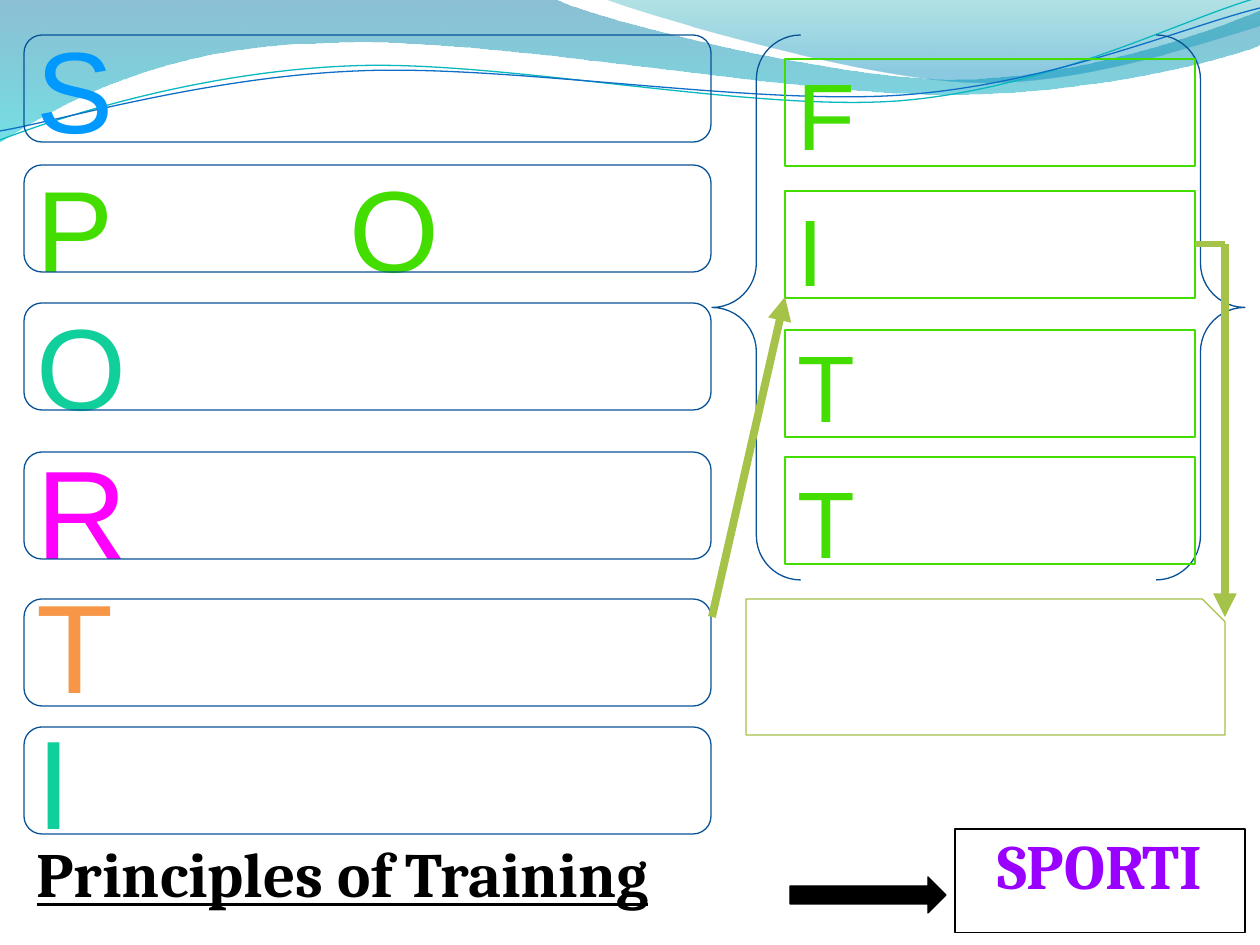
import pptx
import pptx.util
import pptx.dml.color
import pptx.enum.dml
import pptx.enum.shapes
import pptx.enum.text
import pptx.oxml
import pptx.oxml.ns
from dataclasses import dataclass

EMU_PER_PX = 914400 // 126
SHAPE = pptx.enum.shapes.MSO_SHAPE
ALIGN = pptx.enum.text.PP_ALIGN
qn = pptx.oxml.ns.qn
A_NAMESPACE = pptx.oxml.ns.nsdecls("a")


@dataclass(frozen=True)
class Theme:
    blue: str = "0099FF"
    green: str = "43DE00"
    teal: str = "10CF9B"
    magenta: str = "FF00FF"
    orange: str = "F79646"
    purple: str = "9900FF"
    black: str = "000000"
    navy: str = "095295"
    olive: str = "A5C249"
    wave_line_teal: str = "0AB8BF"
    wave_line_blue: str = "0F6FC6"
    letter_font: str = "Arial"
    heading_font: str = "Cambria"
    heading: int = 36
    fitt: int = 54
    letter: int = 66
    big_letter: int = 72
    hairline: float = 0.75


THEME = Theme()
BOX_HEIGHT = 107
PRINCIPLE_TOPS = (35, 165, 303, 452, 599, 727)
FITT_TOPS = (59, 191, 330, 457)

# Each wave: start point, then cubic segments (two controls and an end) or straight points.
BACK_WAVE = [(-1, 0), [(554, -1)],
             [(600, 21), (837, 79), (955, 79)], [(1075, 79), (1207, 33), (1260, 11)],
             [(1261, 45)],
             [(1239, 55), (1096, 96), (940, 94)], [(784, 94), (481, 35), (324, 43)],
             [(163, 45), (58, 105), (-1, 142)]]
FRONT_WAVE = [(604, -1), [(641, 14), (859, 78), (969, 82)],
              [(1079, 87), (1211, 40), (1260, 26)], [(1260, 0)]]
TEAL_LINE = [(0, 140), [(60, 117), (199, 72), (349, 66)],
             [(498, 59), (747, 112), (898, 101)], [(1050, 89), (1182, 19), (1257, -2)]]
BLUE_LINE = [(0, 131), [(59, 121), (207, 77), (357, 71)],
             [(508, 64), (752, 106), (903, 95)], [(1053, 84), (1186, 26), (1260, 8)]]


def px(value):
    return pptx.util.Emu(value * EMU_PER_PX)


def rgb(code):
    return pptx.dml.color.RGBColor.from_string(code)


def a_element(markup):
    """Make a DrawingML element from a tag with its attributes."""
    return pptx.oxml.parse_xml(f"<a:{markup} {A_NAMESPACE}/>")


def set_line(shape, color, width=THEME.hairline):
    shape.line.color.rgb = rgb(color)
    shape.line.width = pptx.util.Pt(width)


def add_wave(slide, outline, closed):
    """Draw the outline, joining every three-point segment into one cubic curve."""
    start, *segments = outline
    builder = slide.shapes.build_freeform(*map(px, start))
    builder.add_line_segments([tuple(map(px, point)) for segment in segments
                               for point in segment], close=closed)
    wave = builder.convert_to_shape()
    straight_parts = iter(list(wave._element.spPr.iter(qn("a:lnTo"))))
    for segment in segments:
        parts = [next(straight_parts) for _ in segment]
        if len(parts) == 3:
            curve = a_element("cubicBezTo")
            parts[0].addprevious(curve)
            for part in parts:
                curve.append(part[0])
                part.getparent().remove(part)
    wave.shadow.inherit = False
    return wave


def add_filled_wave(slide, outline, stops):
    """Stops run from top to bottom as (position, colour, opacity percent)."""
    wave = add_wave(slide, outline, True)
    wave.line.fill.background()
    wave.fill.gradient()
    wave.fill.gradient_angle = 270
    for stop, (position, color, _) in zip(wave.fill.gradient_stops, stops):
        stop.position = position
        stop.color.rgb = rgb(color)
    for node, (_, _, opacity) in zip(wave._element.spPr.iter(qn("a:srgbClr")), stops):
        node.append(a_element(f'alpha val="{opacity * 1000}"'))


def add_wave_line(slide, outline, color):
    wave = add_wave(slide, outline, False)
    wave.fill.background()
    set_line(wave, color)


def add_outline(slide, kind, left, top, width, height, color, fill=None):
    shape = slide.shapes.add_shape(kind, px(left), px(top), px(width), px(height))
    shape.shadow.inherit = False
    if fill:
        shape.fill.solid()
        shape.fill.fore_color.rgb = rgb(fill)
    else:
        shape.fill.background()
    set_line(shape, color)
    return shape


def add_link(slide, start, end, width, arrow=True):
    link = slide.shapes.add_connector(pptx.enum.shapes.MSO_CONNECTOR.STRAIGHT,
                                      *map(px, start + end))
    set_line(link, THEME.olive, width)
    if arrow:
        link.line._get_or_add_ln().append(a_element('tailEnd type="triangle"'))
    link._element.spPr.append(a_element("effectLst"))


def prepare_frame(shape, wrap=True, margin_top=6):
    frame = shape.text_frame
    frame.word_wrap = wrap
    frame.auto_size = pptx.enum.text.MSO_AUTO_SIZE.NONE
    frame.vertical_anchor = pptx.enum.text.MSO_ANCHOR.TOP
    frame.margin_top = px(margin_top)
    return frame


def place(shape, left, top, width, height):
    shape.left, shape.top, shape.width, shape.height = map(px, (left, top, width, height))


def write(paragraph, text, *, size, color, font=THEME.letter_font, bold=False,
          underline=False, align=ALIGN.LEFT, spacing=1.0, before=0.0, tracking=0):
    run = paragraph.add_run()
    run.text = text
    run.font.size = pptx.util.Pt(size)
    run.font.name = font
    run.font.color.rgb = rgb(color)
    run.font.bold = bold
    run.font.underline = underline
    if tracking:
        run._r.get_or_add_rPr().set("spc", str(tracking * 100))
    paragraph.alignment = align
    paragraph.line_spacing = spacing
    paragraph.space_before = pptx.util.Pt(before)


def write_letters(frame, lines, **style):
    """Write one unbulleted paragraph per (letters, format) pair, letters set wide apart."""
    for index, (letters, own_style) in enumerate(lines):
        paragraph = frame.add_paragraph() if index else frame.paragraphs[0]
        line_style = {**style, **own_style}
        for character in letters:
            gap = {"size": THEME.fitt, "tracking": 120} if character == " " else {}
            write(paragraph, character, **{**line_style, **gap})
        properties = paragraph._p.get_or_add_pPr()
        properties.set("marL", "0")
        properties.set("indent", "0")
        properties.append(a_element("buNone"))


def add_background(slide):
    add_filled_wave(slide, BACK_WAVE, [(0, "0074A1", 45), (1, "00C6CF", 55)])
    add_filled_wave(slide, FRONT_WAVE, [(0, "00A1A9", 30), (0.8, "008BBF", 45)])
    add_wave_line(slide, TEAL_LINE, THEME.wave_line_teal)
    add_wave_line(slide, BLUE_LINE, THEME.wave_line_blue)


def add_principles(slide, body):
    place(body, 24, 6, 699, 863)
    big = {"size": THEME.big_letter}
    write_letters(prepare_frame(body, margin_top=12), [
        ("S", {"color": THEME.blue}),
        ("P O", {"color": THEME.green}),
        ("O", {"color": THEME.teal}),
        ("R", {"color": THEME.magenta, **big}),
        ("T", {"color": THEME.orange, "spacing": 0.9, **big}),
        ("I", {"color": THEME.teal, "spacing": 0.9, **big}),
    ], size=THEME.letter)
    for top in PRINCIPLE_TOPS:
        add_outline(slide, SHAPE.ROUNDED_RECTANGLE, 24, top, 687, BOX_HEIGHT, THEME.navy)


def add_fitt(slide):
    letters = slide.shapes.add_textbox(px(785), px(21), px(441), px(558))
    write_letters(prepare_frame(letters, margin_top=12), [(letter, {}) for letter in "FITT"],
                  size=THEME.fitt, color=THEME.green, spacing=1.2)
    add_outline(slide, SHAPE.DOUBLE_BRACE, 712, 35, 533, 545, THEME.navy)
    for top in FITT_TOPS:
        add_outline(slide, SHAPE.RECTANGLE, 785, top, 410, BOX_HEIGHT, THEME.green)
    add_outline(slide, SHAPE.SNIP_1_RECTANGLE, 746, 599, 479, 136, THEME.olive)
    add_link(slide, (712, 617), (785, 297), 4.5)
    add_link(slide, (1195, 244), (1225, 244), 3, arrow=False)
    add_link(slide, (1225, 244), (1225, 617), 4.5)


def add_heading(slide, title):
    style = {"size": THEME.heading, "font": THEME.heading_font, "bold": True}
    place(title, 24, 829, 682, 89)
    write(prepare_frame(title, wrap=False).paragraphs[0], "Principles of Training",
          color=THEME.black, underline=True, **style)
    add_outline(slide, SHAPE.RIGHT_ARROW, 790, 877, 156, 36, THEME.black, THEME.black)
    acronym = add_outline(slide, SHAPE.RECTANGLE, 955, 829, 290, 104, THEME.black)
    write(prepare_frame(acronym).paragraphs[0], "SPORTI", color=THEME.purple,
          align=ALIGN.CENTER, spacing=0.9, before=7, **style)


def main():
    deck = pptx.Presentation()
    deck.slide_width, deck.slide_height = pptx.util.Inches(10), pptx.util.Inches(7.5)
    slide = deck.slides.add_slide(deck.slide_layouts[1])
    title, body = slide.placeholders
    add_background(slide)
    for placeholder in (body, title):
        slide.shapes._spTree.append(placeholder._element)
    add_principles(slide, body)
    add_fitt(slide)
    add_heading(slide, title)
    deck.save("out.pptx")


if __name__ == "__main__":
    main()
